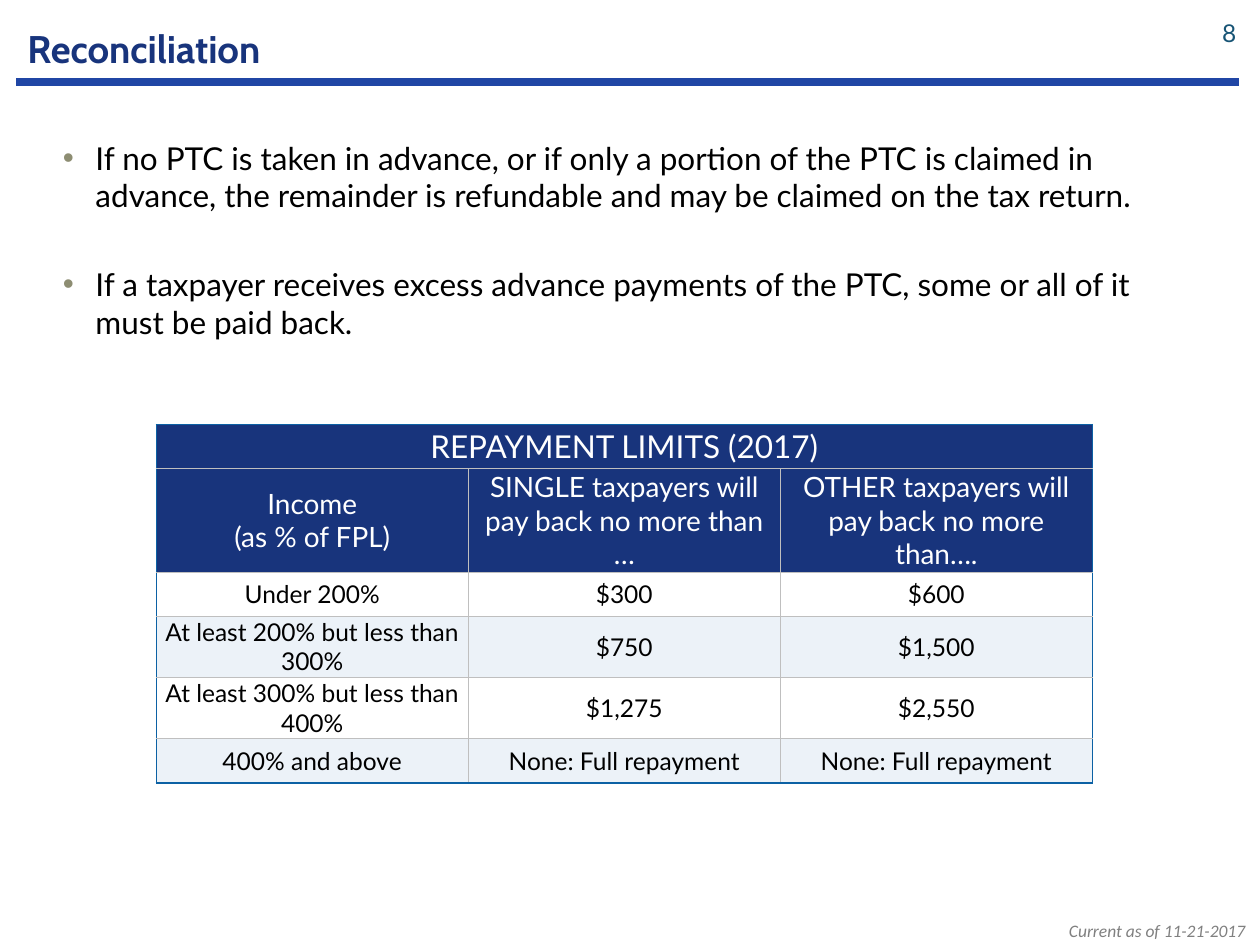
from dataclasses import dataclass

from lxml import etree
from pptx import Presentation
from pptx import util as u
from pptx.dml import color
from pptx.enum import shapes, text
from pptx.oxml import ns

NAVY, BLUE, GREY, PALE = "18347C", "0C61A4", "BFBFBF", "ECF2F8"
WHITE, BLACK = "FFFFFF", "000000"
LEFT, CENTER, RIGHT = text.PP_ALIGN.LEFT, text.PP_ALIGN.CENTER, text.PP_ALIGN.RIGHT
TOP, MIDDLE = text.MSO_ANCHOR.TOP, text.MSO_ANCHOR.MIDDLE


@dataclass
class Style:
    size: float
    color: str
    font: str = "Lato"
    align: text.PP_ALIGN = LEFT
    bold: bool = False
    italic: bool = False


@dataclass
class Box:
    left: float
    top: float
    width: float
    height: float
    lines: list[str]
    style: Style
    anchor: text.MSO_ANCHOR = TOP
    bullet: str = ""
    gap: float = 0


@dataclass
class Row:
    cells: list[str]
    height: float
    size: float
    color: str
    fill: str


BOXES = [
    Box(5.97, 7.25, 4.01, 0.27, ["Current as of 11-21-2017"],
        Style(10, "808080", "Calibri", RIGHT, italic=True)),
    Box(0.12, 0.1, 9.44, 0.57, ["Reconciliation"],
        Style(22, NAVY, "Cabin", bold=True), MIDDLE),
    Box(0.4, 1.05, 9, 5.32,
        ["If no PTC is taken in advance, or if only a portion of the PTC is claimed in "
         "advance, the remainder is refundable and may be claimed on the tax return.",
         "If a taxpayer receives excess advance payments of the PTC, some or all of it "
         "must be paid back."],
        Style(18, BLACK), bullet="8D8D72", gap=29),
    Box(9.4, 0.06, 0.51, 0.4, ["8"], Style(14, "175475", align=RIGHT), MIDDLE),
]

ROWS = [
    Row(["REPAYMENT LIMITS (2017)", "", ""], 0.35, 18, WHITE, NAVY),
    Row(["Income\n(as % of FPL)", "SINGLE taxpayers will pay back no more than …",
         "OTHER taxpayers will pay back no more than…."], 0.48, 16, WHITE, NAVY),
    Row(["Under 200%", "$300", "$600"], 0.35, 14, BLACK, WHITE),
    Row(["At least 200% but less than 300%", "$750", "$1,500"], 0.35, 14, BLACK, PALE),
    Row(["At least 300% but less than 400%", "$1,275", "$2,550"], 0.35, 14, BLACK, WHITE),
    Row(["400% and above", "None: Full repayment", "None: Full repayment"],
        0.35, 14, BLACK, PALE),
]


def rgb(value: str) -> color.RGBColor:
    return color.RGBColor.from_string(value)


def add_run(p, words: str, style: Style) -> None:
    p.alignment = style.align
    r = p.add_run()
    r.text = words
    f = r.font
    f.name, f.size, f.bold, f.italic = style.font, u.Pt(style.size), style.bold, style.italic
    f.color.rgb = rgb(style.color)


def add_bullet(p, tint: str) -> None:
    pPr = p._p.get_or_add_pPr()
    pPr.set("marL", str(u.Inches(0.26)))
    pPr.set("indent", str(u.Inches(-0.26)))
    clr = etree.SubElement(pPr, ns.qn("a:buClr"))
    etree.SubElement(clr, ns.qn("a:srgbClr"), val=tint)
    etree.SubElement(pPr, ns.qn("a:buFont"), typeface="Arial")
    etree.SubElement(pPr, ns.qn("a:buChar"), char="•")


def fill_text(tf, lines: list[str], style: Style, bullet: str = "", gap: float = 0) -> None:
    for i, words in enumerate(lines):
        p = tf.add_paragraph() if i else tf.paragraphs[0]
        if i and gap:
            p.space_before = u.Pt(gap)
        if bullet:
            add_bullet(p, bullet)
        add_run(p, words, style)


def add_box(s, box: Box) -> None:
    sp = s.shapes.add_textbox(*map(u.Inches, (box.left, box.top, box.width, box.height)))
    tf = sp.text_frame
    tf.word_wrap = True
    tf.vertical_anchor = box.anchor
    fill_text(tf, box.lines, box.style, box.bullet, box.gap)


def add_rule(s) -> None:
    ends = map(u.Inches, (0.13, 0.65, 9.83, 0.65))
    sp = s.shapes.add_connector(shapes.MSO_CONNECTOR.STRAIGHT, *ends)
    sp.line.color.rgb = rgb("2046A5")
    sp.line.width = u.Pt(4.75)
    etree.SubElement(sp._element.spPr, ns.qn("a:effectLst"))


def set_borders(cell, outer: dict[str, bool]) -> None:
    tcPr = cell._tc.get_or_add_tcPr()
    for i, (side, is_outer) in enumerate(outer.items()):
        ln = etree.Element(ns.qn(f"a:ln{side}"), w=str(u.Pt(1 if is_outer else 0.5)))
        fill = etree.SubElement(ln, ns.qn("a:solidFill"))
        etree.SubElement(fill, ns.qn("a:srgbClr"), val=BLUE if is_outer else GREY)
        tcPr.insert(i, ln)


def add_limits_table(s, rows: list[Row]) -> None:
    cols = len(rows[0].cells)
    height = sum(row.height for row in rows)
    frame = s.shapes.add_table(len(rows), cols, *map(u.Inches, (1.24, 3.37, 7.43, height)))
    tbl = frame.table
    for i, row in enumerate(rows):
        tbl.rows[i].height = u.Inches(row.height)
        for j, words in enumerate(row.cells):
            cell = tbl.cell(i, j)
            cell.fill.solid()
            cell.fill.fore_color.rgb = rgb(row.fill)
            cell.vertical_anchor = MIDDLE
            cell.margin_left = cell.margin_right = u.Inches(0.03 if i else 0)
            cell.margin_top = cell.margin_bottom = u.Inches(0.01 if i else 0)
            if words:
                fill_text(cell.text_frame, words.split("\n"),
                          Style(row.size, row.color, align=CENTER))
            set_borders(cell, {"L": j == 0, "R": j == cols - 1,
                               "T": i == 0, "B": i == len(rows) - 1})
    title = tbl.cell(0, 0)
    title.merge(tbl.cell(0, cols - 1))
    for side in title._tc.tcPr.findall(ns.qn("a:lnR")):
        side.set("w", str(u.Pt(1)))
        side.find(".//" + ns.qn("a:srgbClr")).set("val", BLUE)


def main() -> None:
    """Build the reconciliation slide and save it."""
    prs = Presentation()
    prs.slide_width, prs.slide_height = u.Inches(10), u.Inches(7.5)
    s = prs.slides.add_slide(prs.slide_layouts[6])
    add_rule(s)
    for box in BOXES:
        add_box(s, box)
    add_limits_table(s, ROWS)
    prs.save("out.pptx")


if __name__ == "__main__":
    main()
